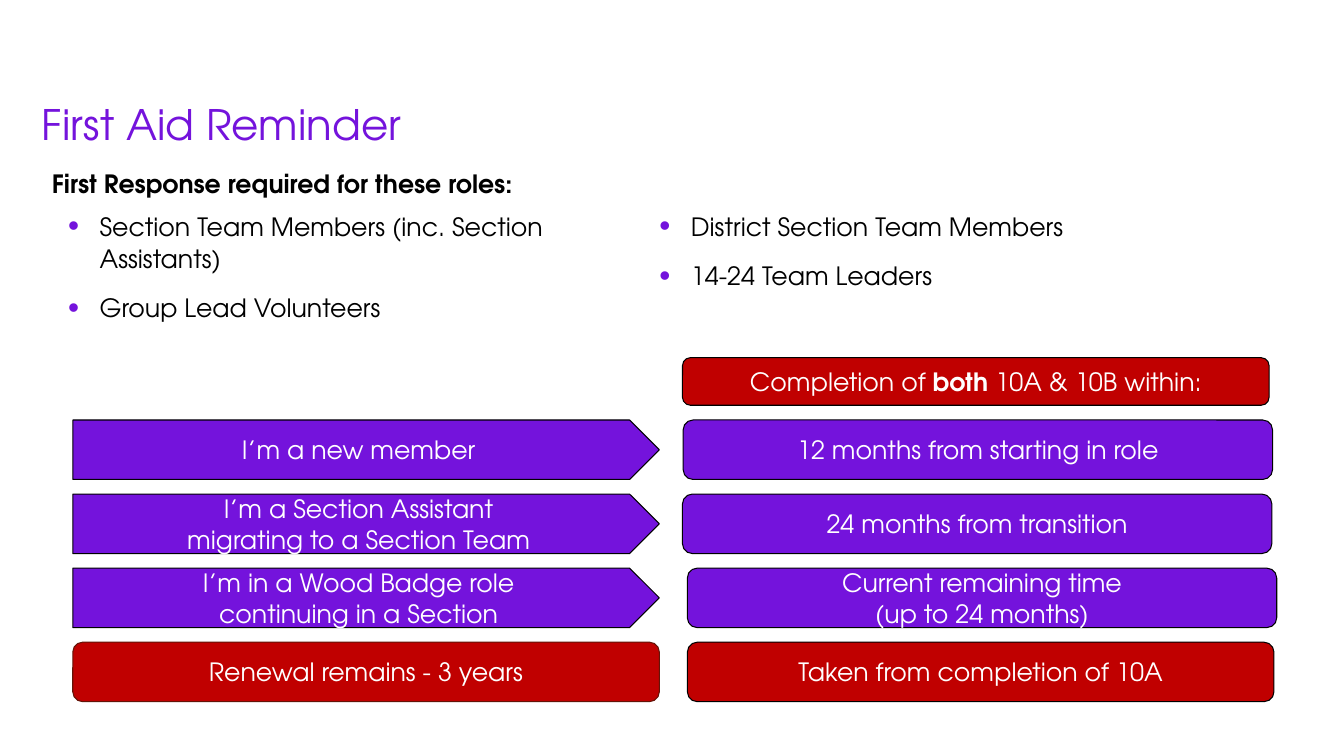
from lxml.etree import SubElement
from pptx import Presentation
from pptx.dml.color import RGBColor
from pptx.enum.shapes import MSO_SHAPE as Form
from pptx.enum.text import MSO_ANCHOR as Anchor, MSO_AUTO_SIZE as Fit, PP_ALIGN as Align
from pptx.oxml.ns import qn
from pptx.util import Pt

FONT = "TeX Gyre Adventor"
PURPLE, RED, BLACK, WHITE = "7413DC", "C00000", "000000", "FFFFFF"


def color(code):
    return RGBColor.from_string(code)


class Page:
    """Holds the text style and the current slide."""

    def __init__(self, deck, font=FONT, size=18):
        self.slide = deck.slides.add_slide(deck.slide_layouts[1])
        self.font, self.size = font, size

    def place(self, shape, left, top, width, height):
        shape.left, shape.top = Pt(left), Pt(top)
        shape.width, shape.height = Pt(width), Pt(height)

    def style(self, para, code, size=None, bold=None, align=Align.LEFT):
        para.alignment = align
        font = para.font
        font.name, font.size = self.font, Pt(size or self.size)
        font.color.rgb = color(code)
        if bold is not None:
            font.bold = bold

    def title(self, text, *area):
        shape = self.slide.shapes.title
        self.place(shape, *area)
        frame = shape.text_frame
        frame.text = text
        frame.auto_size, frame.vertical_anchor = Fit.NONE, Anchor.TOP
        frame.margin_left = frame.margin_right = 0
        frame.margin_top = frame.margin_bottom = 0
        self.style(frame.paragraphs[0], PURPLE, size=30)

    def label(self, text, *area):
        shape = self.slide.shapes.add_textbox(*map(Pt, area))
        frame = shape.text_frame
        frame.word_wrap = True
        frame.text = text
        self.style(frame.paragraphs[0], BLACK, bold=True)

    def bullet(self, para):
        props = para._p.get_or_add_pPr()
        props.set("marL", str(Pt(23)))
        props.set("indent", str(-Pt(22.5)))
        tint = SubElement(props, qn("a:buClr"))
        SubElement(tint, qn("a:srgbClr"), val=PURPLE)
        SubElement(props, qn("a:buSzPct"), val="125000")
        SubElement(props, qn("a:buFont"), typeface="Arial")
        SubElement(props, qn("a:buChar"), char="•")

    def list(self, items, *area):
        shape = self.slide.placeholders[1]
        self.place(shape, *area)
        frame = shape.text_frame
        frame.text = "\n".join(items)
        frame.auto_size = Fit.NONE
        frame._txBody.bodyPr.set("numCol", "2")
        for i, para in enumerate(frame.paragraphs):
            self.bullet(para)
            para.line_spacing = 1.07
            para.space_before = Pt(6 if i else 0)
            para.space_after = Pt(6)
            self.style(para, BLACK)

    def box(self, form, text, fill, *area, line=BLACK):
        """Draw a filled shape; text between asterisks is bold."""
        shape = self.slide.shapes.add_shape(form, *map(Pt, area))
        shape.shadow.inherit = False
        shape.fill.solid()
        shape.fill.fore_color.rgb = color(fill)
        shape.line.color.rgb = color(line)
        shape.line.width = Pt(0.75)
        frame = shape.text_frame
        frame.word_wrap = True
        frame.vertical_anchor = Anchor.MIDDLE
        for i, row in enumerate(text.split("\n")):
            para = frame.add_paragraph() if i else frame.paragraphs[0]
            self.style(para, WHITE, align=Align.CENTER)
            for j, part in enumerate(row.split("*")):
                run = para.add_run()
                run.text = part
                if j % 2:
                    run.font.bold = True


def main():
    deck = Presentation()
    deck.slide_width, deck.slide_height = Pt(960), Pt(540)
    page = Page(deck)

    # Title and roles
    page.title("First Aid Reminder", 30, 70.5, 374, 36)
    page.label("First Response required for these roles:", 30, 116.5, 480, 29)
    page.list(["Section Team Members (inc. Section Assistants)",
               "Group Lead Volunteers",
               "District Section Team Members",
               "14-24 Team Leaders"], 41, 145.5, 859, 70)

    # Heading over the deadlines
    card, arrow = Form.FLOWCHART_ALTERNATE_PROCESS, Form.PENTAGON
    page.box(card, "Completion of *both *10A & 10B within:", RED,
             487.5, 255.5, 419, 34)

    # Each case, with its deadline, left edge and width
    rows = [
        (arrow, "I’m a new member", PURPLE, BLACK,
         "12 months from starting in role", 488, 421),
        (arrow, "I’m a Section Assistant\nmigrating to a Section Team", PURPLE, BLACK,
         "24 months from transition", 487.5, 421),
        (arrow, "I’m in a Wood Badge role\ncontinuing in a Section", PURPLE, BLACK,
         "Current remaining time\n(up to 24 months)", 491, 421),
        (card, "Renewal remains - 3 years", RED, "631408",
         "Taken from completion of 10A", 491, 419),
    ]
    for i, (form, case, fill, line, due, left, width) in enumerate(rows):
        top = 300 + 52.9 * i
        page.box(form, case, fill, 52, top, 419, 42.5, line=line)
        page.box(card, due, fill, left, top, width, 42.5)

    deck.save("out.pptx")


if __name__ == "__main__":
    main()
